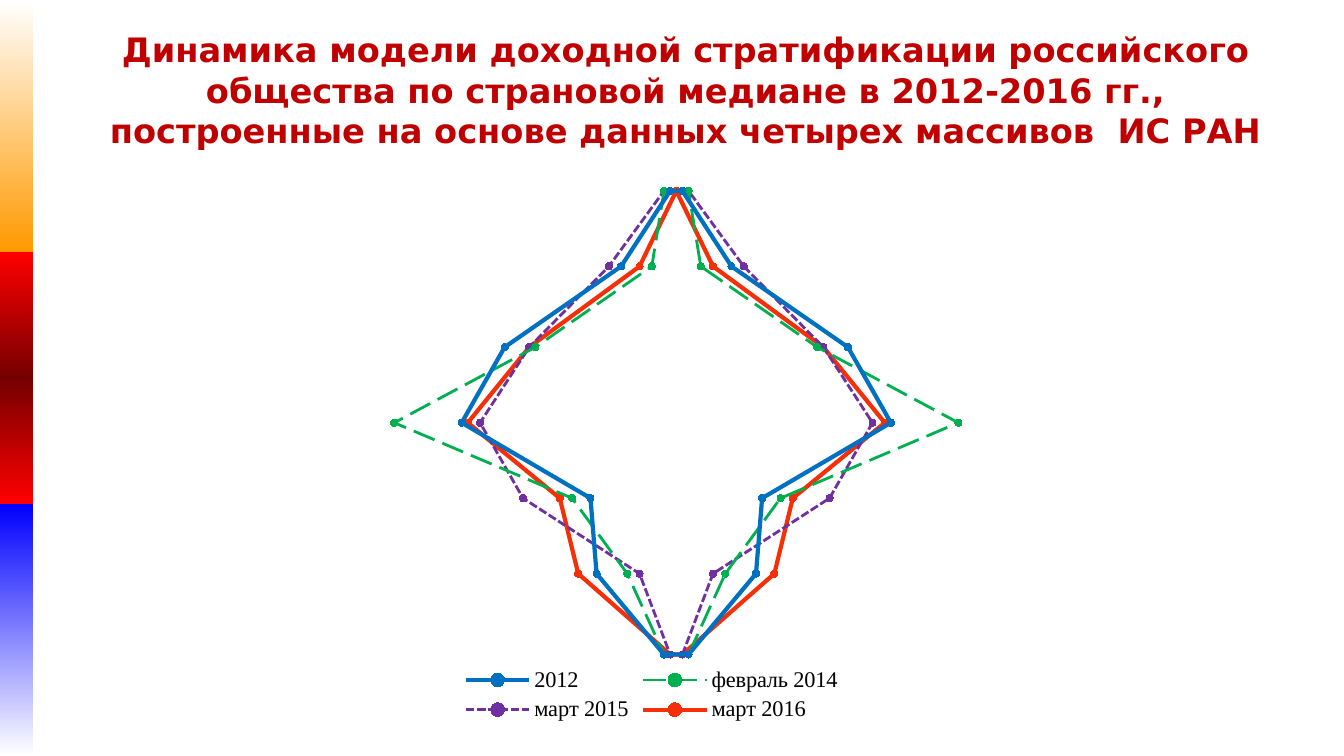
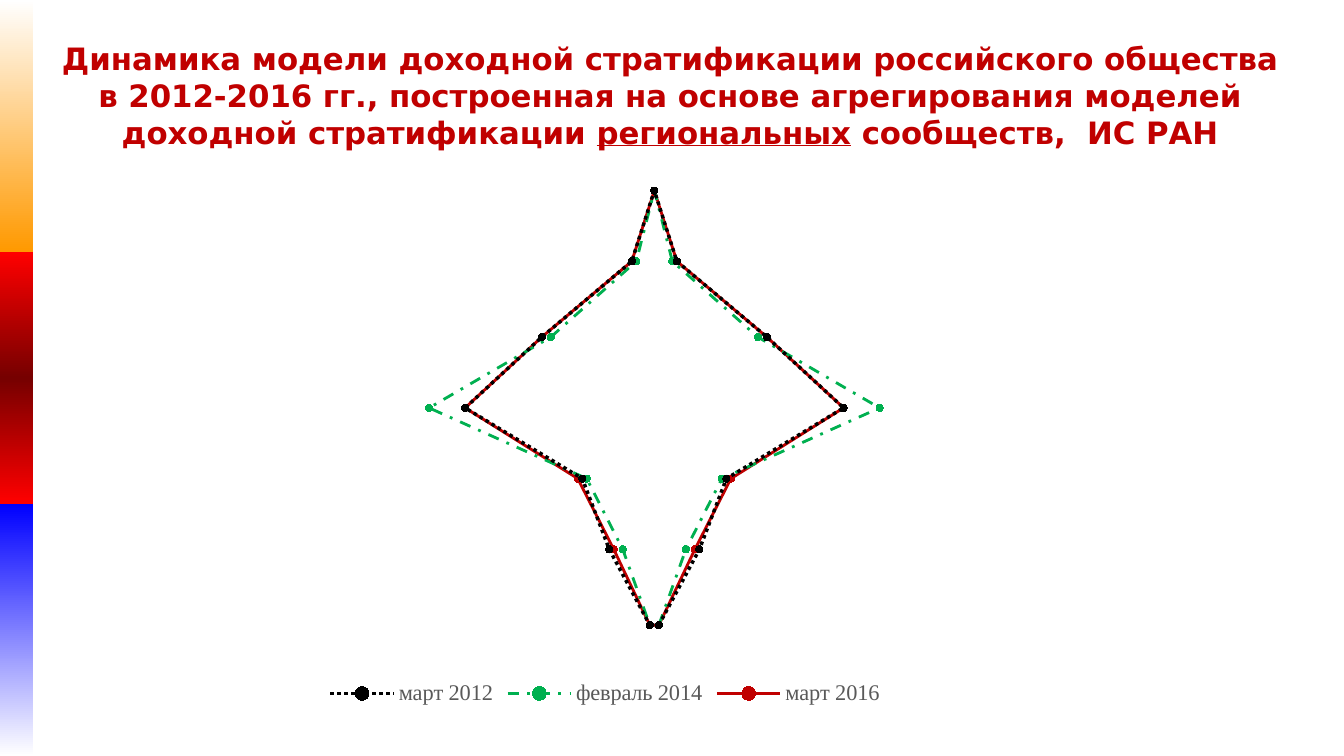
from dataclasses import dataclass

from pptx import Presentation
from pptx.chart.data import XyChartData
from pptx.dml.color import RGBColor
from pptx.enum.chart import XL_CHART_TYPE, XL_LEGEND_POSITION, XL_MARKER_STYLE
from pptx.enum.dml import MSO_LINE
from pptx.enum.shapes import MSO_SHAPE
from pptx.enum.text import MSO_ANCHOR, PP_ALIGN
from pptx.oxml import parse_xml
from pptx.oxml.ns import nsdecls, qn
from pptx.util import Inches, Pt

COLORS = {
    "title": "C00000", "black": "000000", "gray": "595959", "white": "FFFFFF",
    "orange": "FF9900", "red": "FF0000", "maroon": "760000", "navy": "0000FF",
    "blue": "0070C0", "green": "00B050", "purple": "7030A0", "scarlet": "F53009",
    "crimson": "C00000",
}
TITLE_FONT = "DejaVu Sans"
CHART_FONT = "Times New Roman"
BAND_WIDTH, BAND_HEIGHT = 0.33, 2.5
BANDS = [("white", "orange"), ("red", "maroon", "red"), ("navy", "white")]
LEVELS = [14, 29, 43, 57, 71, 86, 100]
AXIS_RANGES = {"category_axis": (-60, 60), "value_axis": (7, 107)}


@dataclass
class Box:
    left: float
    top: float
    width: float
    height: float

    def inches(self) -> tuple:
        return tuple(Inches(v) for v in (self.left, self.top, self.width, self.height))


@dataclass
class Wave:
    """One survey: half-widths of the figure at each income level."""
    name: str
    widths: list[int]
    color: str
    weight: float = 2
    dash: MSO_LINE = MSO_LINE.SOLID


@dataclass
class Page:
    title_box: Box
    title_size: int
    title: list[tuple[str, bool]]  # text, underlined
    chart_box: Box
    plot_area: Box  # fractions of the chart
    legend_color: str
    waves: list[Wave]


PAGES = [
    Page(
        Box(0.68, 0.29, 12.24, 1.25), 24,
        [("Динамика модели доходной стратификации российского общества по страновой "
          "медиане в 2012-2016 гг., построенные на основе данных четырех массивов  ИС РАН",
          False)],
        Box(2.41, 1.52, 8.11, 5.69), Box(0.08, 0, 0.9, 0.94), "black",
        [
            Wave("2012", [2, 13, 14, 35, 28, 9, 1], "blue", 3),
            Wave("февраль 2014", [2, 8, 17, 46, 23, 4, 2], "green", dash=MSO_LINE.LONG_DASH),
            Wave("март 2015", [1, 6, 25, 32, 24, 11, 2], "purple", dash=MSO_LINE.SQUARE_DOT),
            Wave("март 2016", [1, 16, 19, 34, 24, 6, 0], "scarlet", 3),
        ],
    ),
    Page(
        Box(0.37, 0.29, 12.55, 1.25), 22,
        [("Динамика модели доходной стратификации российского общества в 2012-2016 гг., "
          "построенная на основе агрегирования моделей доходной стратификации ", False),
         ("региональных", True),
         (" сообществ,  ИС РАН", False)],
        Box(2.73, 1.54, 6.54, 5.51), Box(0.165, 0, 0.82, 0.91), "gray",
        [
            Wave("март 2012", [1, 10, 16, 42, 25, 5, 0], "black", 2.5, MSO_LINE.ROUND_DOT),
            Wave("февраль 2014", [1, 7, 15, 50, 23, 4, 0], "green", dash=MSO_LINE.DASH_DOT),
            Wave("март 2016", [1, 9, 17, 42, 25, 5, 0], "crimson"),
        ],
    ),
]


def rgb(name: str) -> RGBColor:
    return RGBColor.from_string(COLORS[name])


def set_attrs(obj, values: dict) -> None:
    for name, value in values.items():
        setattr(obj, name, value)


def add_bands(slide) -> None:
    for i, names in enumerate(BANDS):
        box = Box(0, i * BAND_HEIGHT, BAND_WIDTH, BAND_HEIGHT)
        sp = slide.shapes.add_shape(MSO_SHAPE.RECTANGLE, *box.inches())
        sp.shadow.inherit = False
        sp.line.fill.background()
        sp.fill.gradient()
        sp.fill.gradient_angle = 270
        stops = sp._element.spPr.find(qn("a:gradFill")).find(qn("a:gsLst"))
        for stop in list(stops):
            stops.remove(stop)
        for j, name in enumerate(names):
            pos = 100000 * j // (len(names) - 1)
            stops.append(parse_xml(
                f'<a:gs {nsdecls("a")} pos="{pos}"><a:srgbClr val="{COLORS[name]}"/></a:gs>'))


def add_title(slide, page: Page) -> None:
    tf = slide.shapes.add_textbox(*page.title_box.inches()).text_frame
    set_attrs(tf, {"word_wrap": True, "vertical_anchor": MSO_ANCHOR.BOTTOM})
    p = tf.paragraphs[0]
    p.alignment = PP_ALIGN.CENTER
    for text, underlined in page.title:
        r = p.add_run()
        r.text = text
        set_attrs(r.font, {"name": TITLE_FONT, "size": Pt(page.title_size),
                           "bold": True, "underline": underlined})
        r.font.color.rgb = rgb("title")


def place_plot(chart, area: Box) -> None:
    """Fix the inner plot area at fractions of the chart."""
    plot_area = chart._chartSpace.chart.plotArea
    for old in plot_area.findall(qn("c:layout")):
        plot_area.remove(old)
    sizes = {"x": area.left, "y": area.top, "w": area.width, "h": area.height}
    parts = "".join(f'<c:{k} val="{v}"/>' for k, v in sizes.items())
    plot_area.insert(0, parse_xml(
        f'<c:layout {nsdecls("c")}><c:manualLayout><c:layoutTarget val="inner"/>'
        f'<c:xMode val="edge"/><c:yMode val="edge"/>{parts}</c:manualLayout></c:layout>'))


def outline(widths: list[int]) -> list[tuple[int, int]]:
    """Right side upwards, mirrored left side downwards, back to the start."""
    right = list(zip(widths, LEVELS))
    return right + [(-x, y) for x, y in reversed(right)] + right[:1]


def add_figure(slide, page: Page) -> None:
    data = XyChartData()
    for wave in page.waves:
        series = data.add_series(wave.name)
        for x, y in outline(wave.widths):
            series.add_data_point(x, y)
    chart = slide.shapes.add_chart(
        XL_CHART_TYPE.XY_SCATTER_LINES, *page.chart_box.inches(), data).chart
    set_attrs(chart, {"has_title": False, "has_legend": True})
    set_attrs(chart.font, {"name": CHART_FONT, "size": Pt(12)})
    chart.font.color.rgb = rgb("black")
    set_attrs(chart.legend, {"position": XL_LEGEND_POSITION.BOTTOM,
                             "include_in_layout": False})
    set_attrs(chart.legend.font, {"name": CHART_FONT, "size": Pt(16)})
    chart.legend.font.color.rgb = rgb(page.legend_color)
    for axis, (low, high) in AXIS_RANGES.items():
        set_attrs(getattr(chart, axis), {
            "minimum_scale": low, "maximum_scale": high,
            "has_major_gridlines": False, "visible": False})
    place_plot(chart, page.plot_area)

    plot = chart.plots[0]
    plot.vary_by_categories = False
    for series, wave in zip(plot.series, page.waves):
        color = rgb(wave.color)
        series.smooth = False
        line, marker = series.format.line, series.marker
        set_attrs(line, {"width": Pt(wave.weight), "dash_style": wave.dash})
        set_attrs(marker, {"style": XL_MARKER_STYLE.CIRCLE, "size": 5})
        marker.format.fill.solid()
        for part in (line.color, marker.format.fill.fore_color, marker.format.line.color):
            part.rgb = color


def main() -> None:
    prs = Presentation()
    set_attrs(prs, {"slide_width": Inches(13.33), "slide_height": Inches(7.5)})
    for page in PAGES:
        s = prs.slides.add_slide(prs.slide_layouts[6])
        add_bands(s)
        add_title(s, page)
        add_figure(s, page)
    prs.save("out.pptx")


if __name__ == "__main__":
    main()
